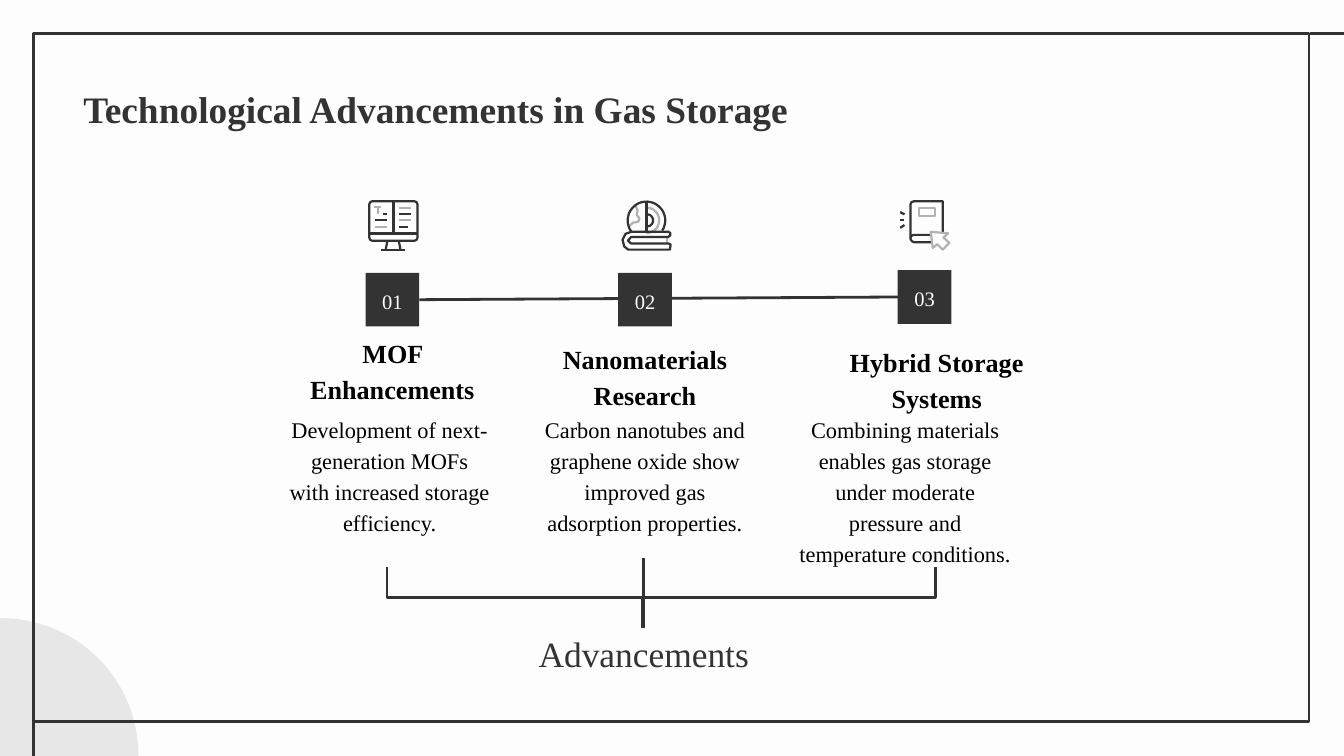
from math import cos, radians, sin

from pptx import Presentation
from pptx.dml.color import RGBColor
from pptx.enum import shapes as kinds, text as txt
from pptx.oxml.ns import qn
from pptx.oxml.xmlchemy import OxmlElement
from pptx.util import Inches, Pt

DARK = RGBColor(0x33, 0x33, 0x33)
GREY = RGBColor(0xB2, 0xB2, 0xB2)
PALE = RGBColor(0xE8, 0xE7, 0xE7)
PAPER = RGBColor(0xFD, 0xFD, 0xFD)
BLACK = RGBColor(0, 0, 0)
FONT = "Times New Roman"
LINE, ELBOW = kinds.MSO_CONNECTOR.STRAIGHT, kinds.MSO_CONNECTOR.ELBOW
RECT, OVAL = kinds.MSO_SHAPE.RECTANGLE, kinds.MSO_SHAPE.OVAL
TOP, MID, LOW = txt.MSO_ANCHOR.TOP, txt.MSO_ANCHOR.MIDDLE, txt.MSO_ANCHOR.BOTTOM
CENTER, LEFT = txt.PP_ALIGN.CENTER, txt.PP_ALIGN.LEFT


def write(shape, words, size, color, anchor, bold=False, align=CENTER, gap=1.15):
    frame = shape.text_frame
    frame.word_wrap = True
    frame.auto_size = txt.MSO_AUTO_SIZE.NONE
    frame.vertical_anchor = anchor
    frame.margin_left = frame.margin_right = Inches(0.1)
    frame.margin_top = frame.margin_bottom = Inches(0.1)
    para = frame.paragraphs[0]
    para.alignment = align
    para.line_spacing = gap
    run = para.add_run()
    run.text = words
    run.font.name, run.font.size, run.font.bold = FONT, Pt(size), bold
    run.font.color.rgb = color


def link(parent, kind, start, end, color=DARK, width=1.5):
    """Add a connector without shadow between two points in inches."""
    line = parent.add_connector(kind, *map(Inches, start + end))
    line.line.color.rgb = color
    line.line.width = Pt(width)
    line._element.spPr.append(OxmlElement("a:effectLst"))
    return line


deck = Presentation()
deck.slide_width, deck.slide_height = Inches(10), Inches(10 * 9 / 16)
slide = deck.slides.add_slide(deck.slide_layouts[5])
slide.background.fill.solid()
slide.background.fill.fore_color.rgb = PAPER
shapes = slide.shapes

# Corner disc and frame
disc = shapes.add_shape(OVAL, Inches(-1.01), Inches(4.6), Inches(2.04), Inches(2.04))
disc.shadow.inherit = False
disc.fill.solid()
disc.fill.fore_color.rgb = PALE
disc.line.fill.background()
frame = shapes.add_shape(RECT, Inches(0.25), Inches(0.25), Inches(9.49), Inches(5.12))
frame.shadow.inherit = False
frame.fill.background()
frame.line.color.rgb = DARK
frame.line.width = Pt(1.5)
link(shapes, LINE, (10.08, 0.25), (9.75, 0.25))
link(shapes, LINE, (0.25, 5.68), (0.25, 5.35))

title = shapes.title
title.left, title.top = Inches(0.52), Inches(0.54)
title.width, title.height = Inches(8.43), Inches(0.63)
write(title, "Technological Advancements in Gas Storage", 20, DARK, TOP,
      bold=True, align=LEFT, gap=1)

# Numbered steps: box place, heading place, body place and width
steps = [
    ("01", 2.72, 2.03, 2.07, 2.66, "MOF Enhancements", 2.05, 1.7,
     "Development of next-generation MOFs with increased storage efficiency."),
    ("02", 4.6, 2.03, 3.95, 2.71, "Nanomaterials Research", 3.95, 1.7,
     "Carbon nanotubes and graphene oxide show improved gas adsorption properties."),
    ("03", 6.68, 2.01, 6.12, 2.73, "Hybrid Storage Systems", 5.84, 1.79,
     "Combining materials enables gas storage under moderate pressure and "
     "temperature conditions."),
]
track = link(shapes, LINE, (3.12, 2.23), (6.68, 2.21))
boxes = []
for num, x, y, hx, hy, head, bx, wide, body in steps:
    box = shapes.add_shape(RECT, Inches(x), Inches(y), Inches(0.4), Inches(0.4))
    box.shadow.inherit = False
    box.fill.solid()
    box.fill.fore_color.rgb = DARK
    box.line.fill.background()
    write(box, num, 11, PAPER, MID)
    boxes.append(box)
    label = shapes.add_textbox(Inches(hx), Inches(hy), Inches(1.7), Inches(0.45))
    write(label, head, 14, BLACK, LOW, bold=True)
    note = shapes.add_textbox(Inches(bx), Inches(2.97), Inches(wide), Inches(0.96))
    write(note, body, 12, BLACK, TOP)
track.begin_connect(boxes[0], 3)
track.end_connect(boxes[2], 1)

total = shapes.add_textbox(Inches(3.84), Inches(4.6), Inches(1.9), Inches(0.52))
write(total, "Advancements", 19, DARK, LOW)

# Icons: strokes in thousandths of an inch from the icon's left top corner
globe, rim, core = [
    [(round(x + r * cos(radians(a))), round(150 + r * sin(radians(a))))
     for a in range(first, last + 1, 10)]
    for x, r, first, last in [(190, 140, 143, 397), (190, 95, -90, 90), (195, 45, -90, 90)]
]
screen = [
    (DARK, [(8, 30), (14, 14), (30, 8), (344, 8), (360, 14), (366, 30), (366, 280),
            (360, 296), (344, 302), (30, 302), (14, 296), (8, 280), (8, 30)]),
    (DARK, [(188, 8), (188, 248)]), (DARK, [(8, 248), (366, 248)]),
    (DARK, [(142, 305), (130, 368)]), (DARK, [(228, 305), (240, 368)]),
    (DARK, [(95, 368), (275, 368)]),
    (GREY, [(45, 52), (95, 52)]), (GREY, [(70, 52), (70, 105)]),
    (DARK, [(108, 103), (140, 103)]),
    (DARK, [(48, 150), (140, 150)]), (GREY, [(48, 198), (140, 198)]),
    (GREY, [(228, 55), (320, 55)]), (DARK, [(228, 103), (320, 103)]),
    (GREY, [(228, 150), (320, 150)]), (DARK, [(228, 198), (295, 198)]),
]
study = [
    (GREY, rim), (GREY, [(345, 280), (345, 320)]),
    (GREY, [(105, 35), (125, 75), (118, 110), (138, 135), (130, 160), (90, 168), (60, 195)]),
    (DARK, globe), (DARK, core), (DARK, [(190, 8), (190, 235)]),
    (DARK, [(355, 235), (80, 235), (35, 250), (12, 295), (25, 345), (55, 368),
            (365, 368), (370, 330), (355, 322), (75, 322), (53, 300), (75, 275),
            (350, 275), (368, 262), (368, 245), (355, 235)]),
]
book = [
    (DARK, [(325, 240), (325, 8), (110, 8), (92, 15), (85, 30), (85, 290), (95, 305),
            (110, 313), (250, 313)]),
    (DARK, [(85, 280), (95, 262), (110, 258), (240, 258)]),
    (GREY, [(148, 60), (265, 60), (265, 117), (148, 117), (148, 60)]),
    (DARK, [(8, 88), (40, 105)]), (DARK, [(8, 147), (38, 147)]),
    (DARK, [(8, 205), (40, 185)]),
    (GREY, [(235, 235), (365, 247), (330, 278), (374, 318), (325, 368), (285, 328),
            (250, 355), (235, 235)]),
]
for left, strokes in [(4.62, study), (2.74, screen), (6.69, book)]:
    icon = shapes.add_group_shape().shapes
    for color, points in strokes:
        if len(points) == 2:
            ends = [(left + x / 1000, 1.49 + y / 1000) for x, y in points]
            link(icon, LINE, *ends, color, 1.2)
            continue
        pen = icon.build_freeform(*points[0], scale=Inches(0.001))
        pen.add_line_segments(points[1:], close=points[0] == points[-1])
        path = pen.convert_to_shape(Inches(left), Inches(1.49))
        path.shadow.inherit = False
        path.fill.background()
        path.line.color.rgb = color
        path.line.width = Pt(1.2)

# Bracket: elbows turned a quarter so that they leave downwards
for x, y, end, turn in [(2.88, 4.22, 4.78, 270), (4.79, 4.15, 4.79, 270),
                        (6.96, 4.22, 4.79, 90)]:
    mid, span = (x + end) / 2, abs(end - x)
    arm = link(shapes, ELBOW, (mid - 0.225, y + 0.225 - span / 2),
               (mid + 0.225, y + 0.225 + span / 2))
    form = arm._element.spPr.find(qn("a:xfrm"))
    form.set("rot", str(turn * 60000))
    if turn == 270:
        form.set("flipH", "1")

deck.save("out.pptx")
